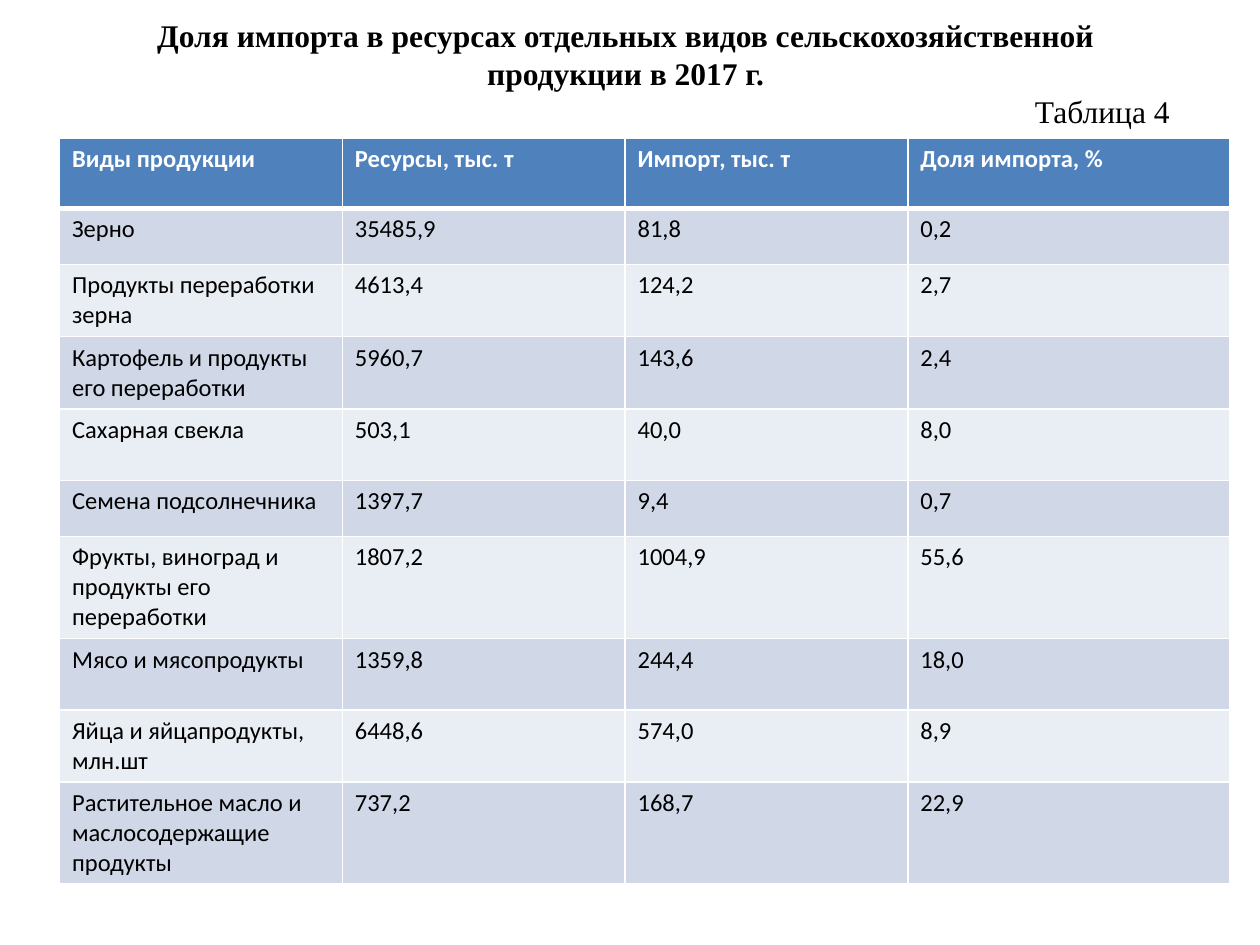
"""Build a slide with a table of import shares in agricultural resources."""
from lxml import etree
from pptx import Presentation
from pptx.dml.color import RGBColor
from pptx.enum.text import PP_ALIGN as AL
from pptx.oxml.ns import qn
from pptx.util import Cm, Pt

WHITE = RGBColor(0xFF, 0xFF, 0xFF)
BLACK = RGBColor(0x00, 0x00, 0x00)
BLUE = RGBColor(0x4F, 0x81, 0xBD)
BAND_DARK = RGBColor(0xD0, 0xD8, 0xE8)
BAND_LIGHT = RGBColor(0xE9, 0xED, 0xF4)

ROWS = [
    (1.42, "Виды продукции", "Ресурсы, тыс. т", "Импорт, тыс. т", "Доля импорта, %"),
    (1.13, "Зерно", "35485,9", "81,8", "0,2"),
    (1.44, "Продукты переработки зерна", "4613,4", "124,2", "2,7"),
    (1.44, "Картофель и продукты его переработки", "5960,7", "143,6", "2,4"),
    (1.44, "Сахарная свекла", "503,1", "40,0", "8,0"),
    (1.13, "Семена подсолнечника", "1397,7", "9,4", "0,7"),
    (2.02, "Фрукты, виноград и продукты его переработки", "1807,2", "1004,9", "55,6"),
    (1.44, "Мясо и мясопродукты", "1359,8", "244,4", "18,0"),
    (1.44, "Яйца и яйцапродукты, млн.шт", "6448,6", "574,0", "8,9"),
    (2.02, "Растительное масло и маслосодержащие продукты", "737,2", "168,7", "22,9"),
]
COL_WIDTHS = [5.7, 5.7, 5.7, 6.5]


def add_run(p, text, font, size, color, bold):
    r = p.add_run()
    r.text = text
    r.font.name = font
    r.font.size = Pt(size)
    r.font.color.rgb = color
    r.font.bold = bold


def set_borders(cell, widths):
    tc_pr = cell._tc.get_or_add_tcPr()
    for i, (side, width) in enumerate(widths.items()):
        ln = etree.Element(qn(f"a:ln{side}"), w=str(Pt(width)))
        fill = etree.SubElement(ln, qn("a:solidFill"))
        etree.SubElement(fill, qn("a:srgbClr"), val=str(WHITE))
        tc_pr.insert(i, ln)


prs = Presentation()
prs.slide_width = Cm(25.4)
prs.slide_height = Cm(19.05)
s = prs.slides.add_slide(prs.slide_layouts[6])

height = sum(row[0] for row in ROWS)
table = s.shapes.add_table(len(ROWS), len(COL_WIDTHS), Cm(1.2), Cm(2.78),
                           Cm(sum(COL_WIDTHS)), Cm(height)).table
for col, width in zip(table.columns, COL_WIDTHS):
    col.width = Cm(width)
for i, (row_height, *texts) in enumerate(ROWS):
    table.rows[i].height = Cm(row_height)
    header = i == 0
    band = BAND_DARK if i % 2 else BAND_LIGHT
    for j, text in enumerate(texts):
        cell = table.cell(i, j)
        cell.fill.solid()
        cell.fill.fore_color.rgb = BLUE if header else band
        set_borders(cell, {"L": 1, "R": 1, "T": 3 if i == 1 else 1, "B": 3 if header else 1})
        add_run(cell.text_frame.paragraphs[0], text, "Calibri", 14,
                WHITE if header else BLACK, header)

sp = s.shapes.add_textbox(Cm(1.4), Cm(0.2), Cm(22.43), Cm(3.33))
tf = sp.text_frame
tf.word_wrap = True
p = tf.paragraphs[0]
p.alignment = AL.CENTER
add_run(p, "Доля импорта в ресурсах отдельных видов сельскохозяйственной продукции в 2017 г.",
        "Times New Roman", 18, BLACK, True)
p = tf.add_paragraph()
p.alignment = AL.RIGHT
add_run(p, "Таблица 4", "Times New Roman", 18, BLACK, False)

prs.save("out.pptx")
